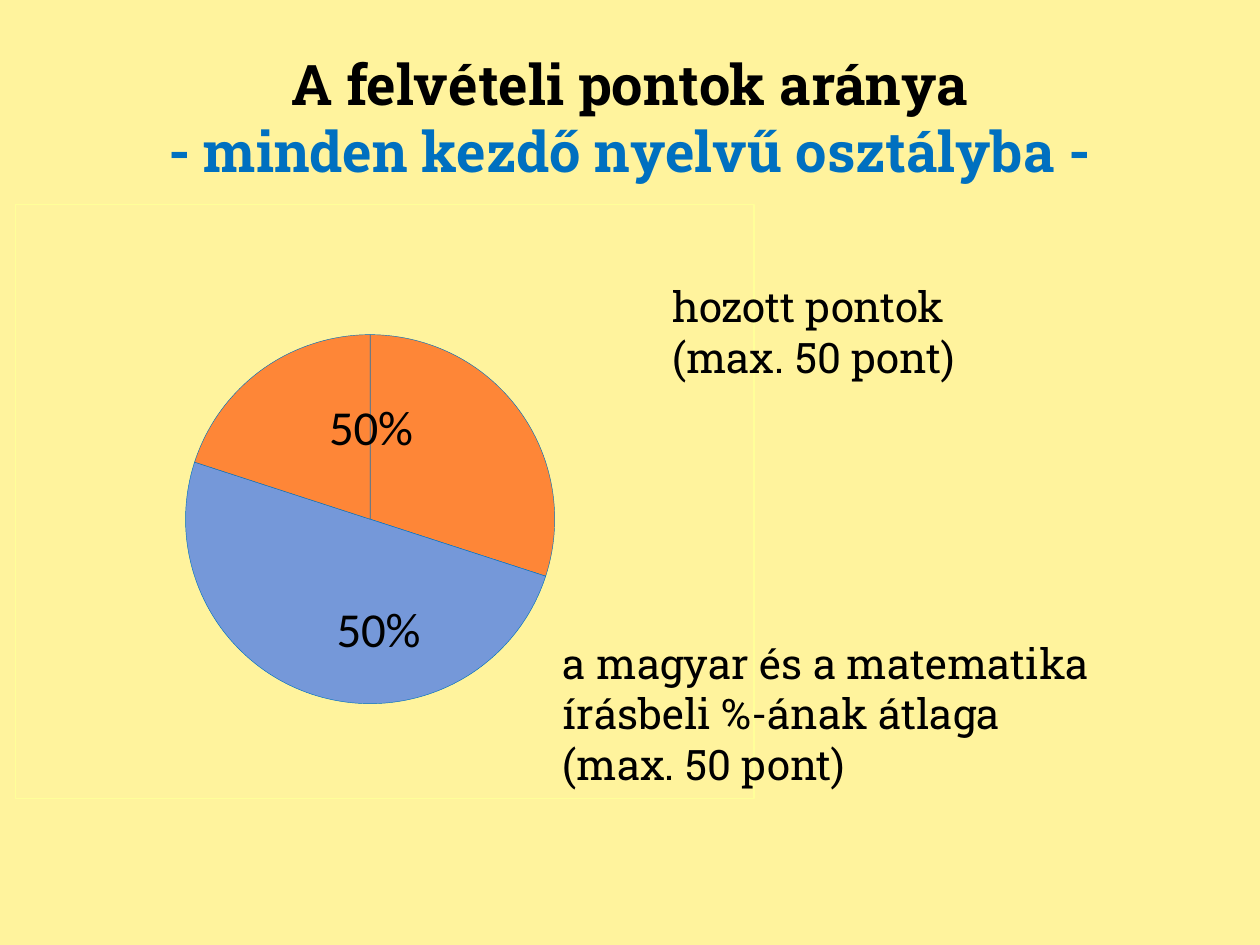
import pptx
import pptx.chart.data
import pptx.dml.color
import pptx.enum.chart
import pptx.enum.text
import pptx.oxml
import pptx.oxml.ns
import pptx.util

Pt = pptx.util.Pt
RGB = pptx.dml.color.RGBColor
CREAM = RGB(0xFF, 0xF3, 0x9D)
BLACK = RGB(0, 0, 0)
BLUE = RGB(0x00, 0x70, 0xC0)
ORANGE = RGB(0xFE, 0x86, 0x37)
SKY = RGB(0x75, 0x98, 0xD9)
PALE = RGB(0xFF, 0xFF, 0x99)
SLAB = "Roboto Slab"
SPACE = pptx.oxml.ns.nsdecls("c", "a")


def style(font, name, size, color=BLACK):
    font.name = name
    font.size = Pt(size)
    font.color.rgb = color


def add_title(slide, top, low):
    shape = slide.shapes.title
    shape.left, shape.top, shape.width, shape.height = map(Pt, (36, 21.6, 648, 90))
    frame = shape.text_frame
    frame.word_wrap = True
    frame.vertical_anchor = pptx.enum.text.MSO_ANCHOR.MIDDLE
    para = frame.paragraphs[0]
    para.alignment = pptx.enum.text.PP_ALIGN.CENTER
    style(para.font, SLAB, 32)
    para.font.bold = True
    para.add_run().text = top
    para.add_line_break()
    run = para.add_run()
    run.text = low
    run.font.color.rgb = BLUE


def add_note(slide, box, lines):
    frame = slide.shapes.add_textbox(*map(Pt, box)).text_frame
    frame.word_wrap = True
    frame.auto_size = pptx.enum.text.MSO_AUTO_SIZE.SHAPE_TO_FIT_TEXT
    frame.text = "\n".join(lines)
    for para in frame.paragraphs:
        style(para.font, SLAB, 24)


def make_layout(**parts):
    body = "".join(f'<c:{key} val="{val}"/>' for key, val in parts.items())
    return pptx.oxml.parse_xml(
        f"<c:layout {SPACE}><c:manualLayout>{body}</c:manualLayout></c:layout>")


def set_frame(chart):
    area = chart.element.find(pptx.oxml.ns.qn("c:chart"))
    area.addnext(pptx.oxml.parse_xml(
        f'<c:spPr {SPACE}><a:noFill/><a:ln w="{Pt(0.75)}"><a:solidFill>'
        f'<a:srgbClr val="{PALE}"/></a:solidFill></a:ln></c:spPr>'))
    plot = area.find(pptx.oxml.ns.qn("c:plotArea"))
    for old in plot.findall(pptx.oxml.ns.qn("c:layout")):
        plot.remove(old)
    plot.insert(0, make_layout(layoutTarget="inner", xMode="edge", yMode="edge",
                               x=0.23, y=0.18, w=0.5, h=0.7))


def add_label(point, x, y, text=None):
    label = point.data_label
    if text:
        frame = label.text_frame
        frame.text = text
        style(frame.paragraphs[0].runs[0].font, "Calibri", 28)
    else:
        style(label.font, "Calibri", 28)
    label.position = pptx.enum.chart.XL_LABEL_POSITION.CENTER
    node = label._dLbl
    node.insert(1, make_layout(x=x, y=y))


def add_pie(slide):
    data = pptx.chart.data.CategoryChartData(number_format="0%")
    data.categories = ["1", "2", "3"]
    data.add_series("Series 1", (0.3, 0.5, 0.2))
    chart = slide.shapes.add_chart(
        pptx.enum.chart.XL_CHART_TYPE.PIE,
        *map(Pt, (8.64, 116.64, 422.64, 339.84)), data).chart
    chart.has_title = False
    chart.has_legend = False
    style(chart.font, "Calibri", 10)
    set_frame(chart)
    series = chart.plots[0].series[0]
    series.data_labels.show_value = False
    for i, color in enumerate((ORANGE, SKY, ORANGE)):
        form = series.points[i].format
        form.fill.solid()
        form.fill.fore_color.rgb = color
        form.line.color.rgb = BLUE
        form.line.width = Pt(0.25)
    add_label(series.points[0], -0.1, -0.06, "50%")
    add_label(series.points[1], 0.05, 0.04)


def main():
    deck = pptx.Presentation()
    deck.slide_width, deck.slide_height = Pt(720), Pt(540)
    slide = deck.slides.add_slide(deck.slide_layouts[5])
    slide.background.fill.solid()
    slide.background.fill.fore_color.rgb = CREAM
    add_title(slide, "A felvételi pontok aránya", "- minden kezdő nyelvű osztályba -")
    add_pie(slide)
    limit = "(max. 50 pont)"
    add_note(slide, (314.64, 360.72, 360, 94.32),
             ("a magyar és a matematika írásbeli %-ának átlaga", limit))
    add_note(slide, (377.28, 156.96, 221.04, 65.52), ("hozott pontok", limit))
    deck.save("out.pptx")


if __name__ == "__main__":
    main()
